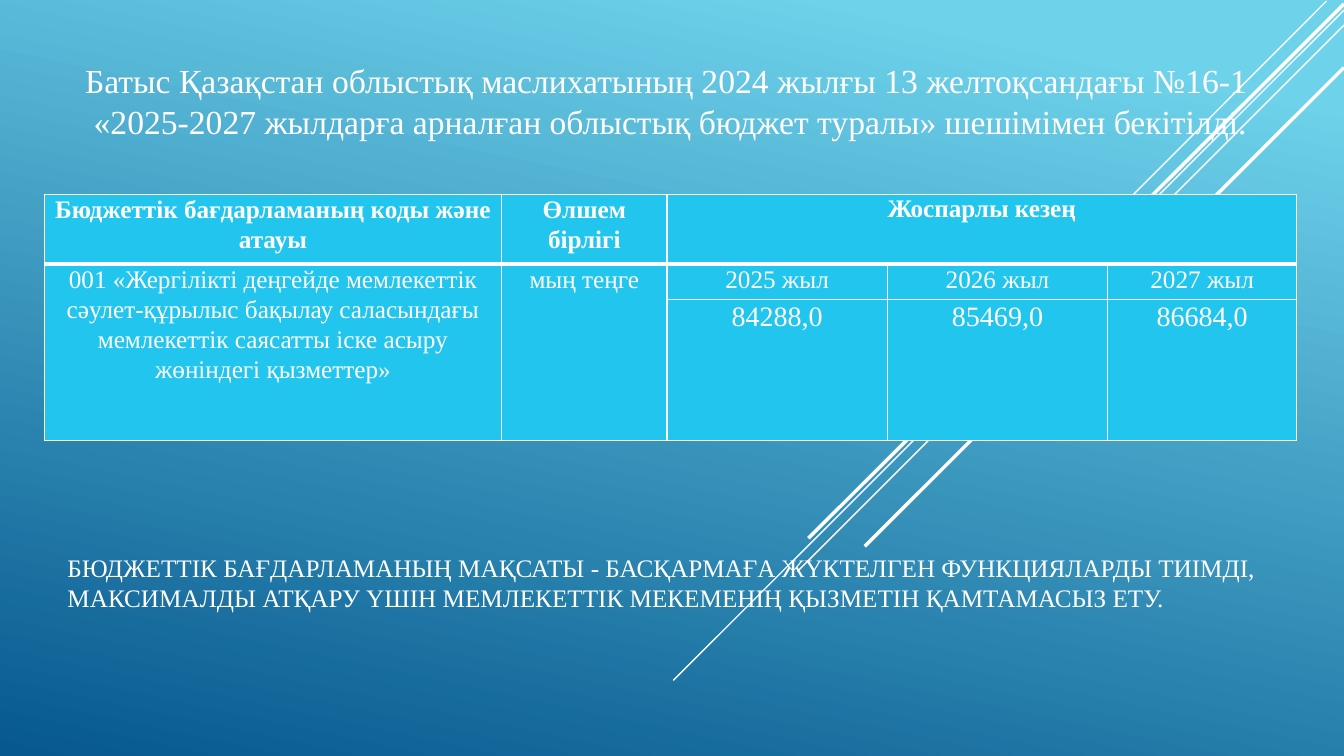
"""Build the regional budget slide: approval title, plan table and program goal."""
from lxml import etree
from pptx import Presentation
from pptx import util as u
from pptx.dml.color import RGBColor
from pptx.enum import shapes, text
from pptx.oxml.ns import qn

HUE = {"white": "FFFFFF", "cell": "22C5ED", "sky": "6ED2EB", "deep": "06588E"}
FONT = "Times New Roman"
MID, LEFT, FULL = text.PP_ALIGN.CENTER, text.PP_ALIGN.LEFT, text.PP_ALIGN.JUSTIFY

deck = Presentation()
deck.slide_width, deck.slide_height = u.Inches(13.33), u.Inches(7.5)
col, row = deck.slide_width / 100, deck.slide_height / 100
slide = deck.slides.add_slide(deck.slide_layouts[6])


def grid(x, y, *size):
    """Turn percent pairs into slide lengths."""
    return [int(n * (row if i % 2 else col)) for i, n in enumerate((x, y, *size))]


def write(para, words, size, align, bold=False):
    """Add one white run to a paragraph."""
    para.alignment = align
    run = para.add_run()
    run.text = words
    run.font.name, run.font.size, run.font.bold = FONT, u.Pt(size), bold
    run.font.color.rgb = RGBColor.from_string(HUE["white"])


fill = slide.background.fill
fill.gradient()
fill.gradient_angle = 258
for stop, (place, name) in zip(fill.gradient_stops, [(0.1, "sky"), (1, "deep")]):
    stop.position = place
    stop.color.rgb = RGBColor.from_string(HUE[name])

rays = [
    (98.7, 0.13, 67.5, 55.73, 1),
    (100, 1.33, 50.1, 90, 1),
    (100, 3.33, 59.33, 75.6, 1),
    (100, 0.53, 60.15, 71.2, 2.5),
    (100, 8.93, 64.35, 72.27, 2.5),
]
for *ends, width in rays:
    ray = slide.shapes.add_connector(shapes.MSO_CONNECTOR.STRAIGHT, *grid(*ends))
    ray.line.color.rgb = RGBColor.from_string(HUE["white"])
    ray.line.width = u.Pt(width)
    etree.SubElement(ray._element.spPr, qn("a:effectLst"))

notes = [
    ((2.33, 7.33, 95.1, 12.13), 24, True, [
        ("Батыс Қазақстан облыстық маслихатының 2024 жылғы 13 желтоқсандағы №16-1 ", MID),
        ("«2025-2027 жылдарға арналған облыстық бюджет туралы» шешімімен бекітілді.", MID)]),
    ((4.28, 72.4, 91.2, 9.47), 18, False, [
        ("БЮДЖЕТТІК БАҒДАРЛАМАНЫҢ МАҚСАТЫ - БАСҚАРМАҒА ЖҮКТЕЛГЕН ФУНКЦИЯЛАРДЫ ТИІМДІ,", LEFT),
        ("МАКСИМАЛДЫ АТҚАРУ ҮШІН МЕМЛЕКЕТТІК МЕКЕМЕНІҢ ҚЫЗМЕТІН ҚАМТАМАСЫЗ ЕТУ.", FULL)]),
]
for area, size, wrap, lines in notes:
    frame = slide.shapes.add_textbox(*grid(*area)).text_frame
    frame.word_wrap = wrap
    frame.auto_size = text.MSO_AUTO_SIZE.SHAPE_TO_FIT_TEXT
    for i, (words, align) in enumerate(lines):
        para = frame.add_paragraph() if i else frame.paragraphs[0]
        write(para, words, size, align)

plan = [
    ["Бюджеттiк бағдарламаның коды және атауы", "Өлшем бірлігі", "Жоспарлы кезең", "", ""],
    ["001 «Жергілікті деңгейде мемлекеттік сәулет-құрылыс бақылау саласындағы "
     "мемлекеттік саясатты іске асыру жөніндегі қызметтер»", "мың теңге",
     "2025 жыл", "2026 жыл", "2027 жыл"],
    ["", "", "84288,0", "85469,0", "86684,0"],
]
table = slide.shapes.add_table(3, 5, *grid(3.3, 25.73, 93.19, 32.54)).table
table.first_row = table.horz_banding = False
for part, share in zip(table.columns, [34.03, 12.3, 16.4, 16.4, 14.06]):
    part.width = int(share * col)
for part, share in zip(table.rows, [9.2, 4.67, 18.67]):
    part.height = int(share * row)
for first, last in [((0, 2), (0, 4)), ((1, 0), (2, 0)), ((1, 1), (2, 1))]:
    table.cell(*first).merge(table.cell(*last))

for r, line in enumerate(plan):
    for c, words in enumerate(line):
        cell = table.cell(r, c)
        cell.margin_left = cell.margin_right = u.Inches(0.07)
        cell.margin_top = cell.margin_bottom = 0
        props = cell._tc.get_or_add_tcPr()
        for side in "LRTB":
            thick = (r, side) in [(0, "B"), (1, "T")]
            edge = etree.SubElement(props, qn("a:ln" + side), w=str(u.Pt(3 if thick else 1)))
            paint = etree.SubElement(edge, qn("a:solidFill"))
            etree.SubElement(paint, qn("a:srgbClr"), val=HUE["white"])
        cell.fill.solid()
        cell.fill.fore_color.rgb = RGBColor.from_string(HUE["cell"])
        if words:
            para = cell.text_frame.paragraphs[0]
            if cell.span_width > 1:
                para.space_before = u.Pt(12)
            else:
                para.line_spacing = 1.07
            write(para, words, 20 if r == 2 else 18, MID, r == 0)

deck.save("out.pptx")
